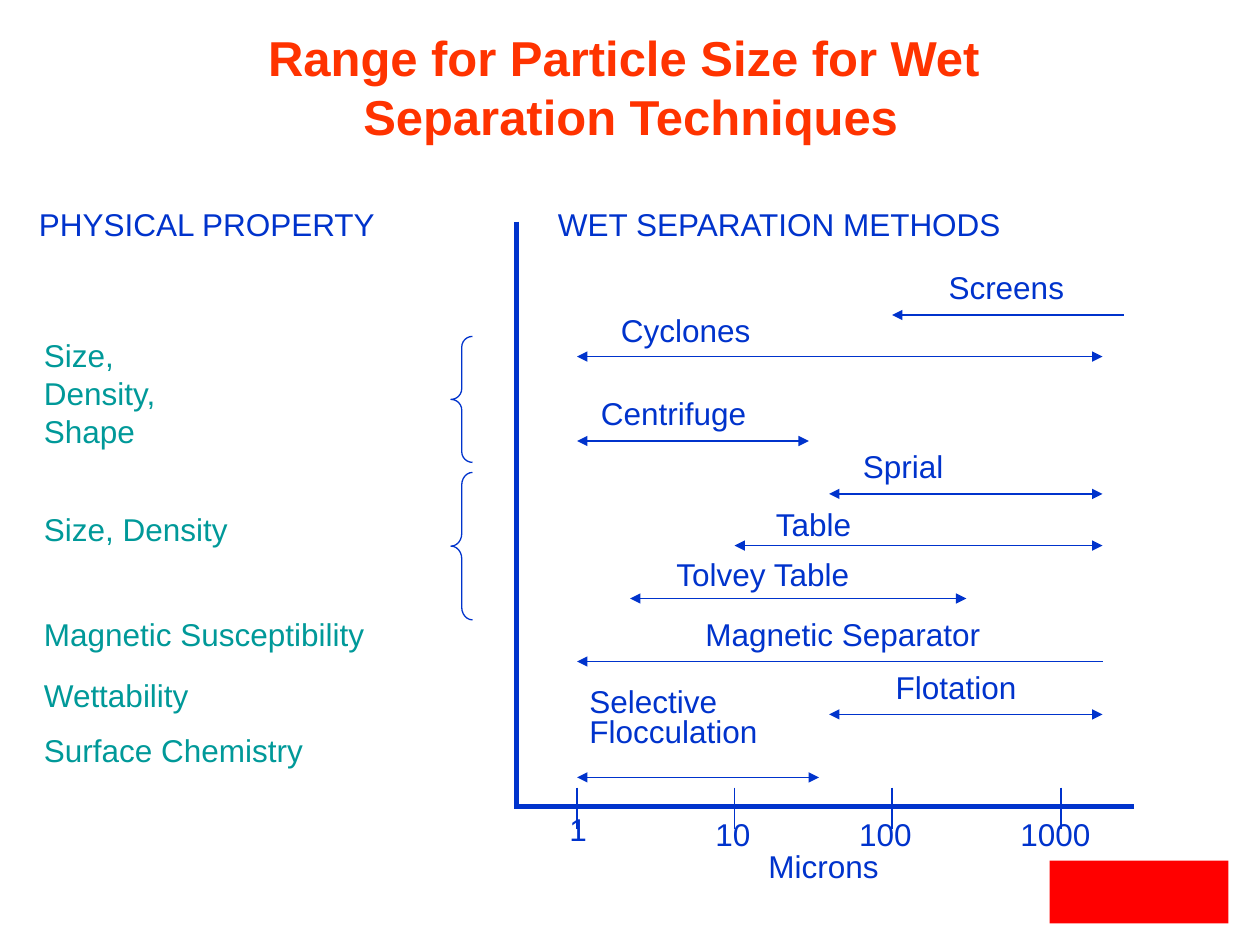
from lxml import etree
from pptx import Presentation
from pptx.dml.color import RGBColor
from pptx.enum import shapes, text
from pptx.oxml.ns import qn
from pptx.util import Inches, Pt

ORANGE = RGBColor(0xFF, 0x33, 0x00)
BLUE = RGBColor(0x00, 0x33, 0xCC)
TEAL = RGBColor(0x00, 0x99, 0x99)
RED = RGBColor(0xFF, 0x00, 0x00)

# label, label x, y, width, arrow start, end, arrow y, points right too
METHODS = [
    ("Screens", 3.35, 0.5, 1.24, 3, 4.84, 0.92, False),
    ("Cyclones", 0.75, 0.84, 1.44, 0.5, 4.67, 1.25, True),
    ("Centrifuge", 0.59, 1.5, 1.62, 0.5, 2.34, 1.92, True),
    ("Sprial", 2.67, 1.92, 1, 2.5, 4.67, 2.34, True),
    ("Table", 1.98, 2.38, 0.96, 1.75, 4.67, 2.75, True),
    ("Tolvey Table", 1.19, 2.78, 2.06, 0.92, 3.59, 3.17, True),
    ("Magnetic Separator", 1.42, 3.25, 2.82, 0.5, 4.67, 3.67, False),
    ("Flotation", 2.93, 3.67, 1.4, 2.5, 4.67, 4.09, True),
    ("Selective\nFlocculation", 0.5, 3.84, 1.86, 0.5, 2.42, 4.59, True),
]
# tick x, label, label x, label y, label width
TICKS = [
    (0.5, "1", 0.34, 4.8, 0.37),
    (1.75, "10", 1.5, 4.84, 0.53),
    (3, "100", 2.64, 4.84, 0.7),
    (4.34, "1000", 3.92, 4.84, 0.87),
]
# property, y, width, height
PROPERTIES = [
    ("Size,\nDensity,\nShape", 1.04, 1.32, 1.3),
    ("Size, Density", 2.42, 2.92, 0.5),
    ("Magnetic Susceptibility", 3.25, 3.75, 0.5),
    ("Wettability", 3.74, 2.92, 0.5),
    ("Surface Chemistry", 4.17, 2.92, 0.5),
]
# brace y, height, curve
BRACES = [(1.09, 1, 0.5), (2.17, 1.17, 0.583)]


def fill_text(sp, content, size, color, bold=False, align=None, spacing=None):
    tf = sp.text_frame
    tf.word_wrap = True
    tf.auto_size = text.MSO_AUTO_SIZE.NONE
    tf.vertical_anchor = text.MSO_ANCHOR.TOP
    tf.text = content
    for p in tf.paragraphs:
        p.alignment = align
        p.line_spacing = spacing
        p.font.name = "Arial"
        p.font.size = Pt(size)
        p.font.bold = bold
        p.font.color.rgb = color


def add_label(slide, content, x, y, w, h=0.5, color=BLUE, spacing=None):
    sp = slide.shapes.add_textbox(Inches(x), Inches(y), Inches(w), Inches(h))
    fill_text(sp, content, 18, color, spacing=spacing)


def add_line(slide, x1, y1, x2, y2, width, *arrow_ends):
    """Arrow ends are headEnd (start) and tailEnd (finish), in that order."""
    line = slide.shapes.add_connector(
        shapes.MSO_CONNECTOR.STRAIGHT,
        Inches(x1), Inches(y1), Inches(x2), Inches(y2))
    line.line.color.rgb = BLUE
    line.line.width = Pt(width)
    ln = line.line._get_or_add_ln()
    for end in arrow_ends:
        etree.SubElement(ln, qn("a:" + end), type="triangle")
    etree.SubElement(line._element.spPr, qn("a:effectLst"))


def add_title(slide, x, y, w, h):
    sp = slide.shapes.title
    sp.left, sp.top, sp.width, sp.height = map(Inches, (x, y, w, h))
    fill_text(sp, "Range for Particle Size for Wet \nSeparation Techniques", 28,
              ORANGE, bold=True, align=text.PP_ALIGN.CENTER)


def add_properties(slide, x, y, w):
    add_label(slide, "PHYSICAL PROPERTY", x, y, w)
    for name, dy, width, height in PROPERTIES:
        add_label(slide, name, x + 0.04, y + dy, width, height, TEAL)

    # Braces tie the properties to their methods
    for dy, height, curve in BRACES:
        sp = slide.shapes.add_shape(
            shapes.MSO_SHAPE.LEFT_BRACE, Inches(x + 3.37), Inches(y + dy),
            Inches(0.17), Inches(height))
        sp.adjustments[0] = curve
        sp.shadow.inherit = False
        sp.fill.background()
        sp.line.color.rgb = BLUE
        sp.line.width = Pt(0.75)


def add_methods(slide, x, y, w, axis_dy):
    add_label(slide, "WET SEPARATION METHODS", x + 0.25, y, 4.78)

    # Axes
    axis_y = y + axis_dy
    add_line(slide, x + 0.02, y + 0.18, x + 0.02, axis_y + 0.02, 3)
    add_line(slide, x, axis_y, x + w, axis_y, 3)

    # Micron scale
    for tick, name, dx, dy, width in TICKS:
        add_line(slide, x + tick, axis_y - 0.15, x + tick, axis_y + 0.18, 0.75)
        add_label(slide, name, x + dx, y + dy, width)
    add_label(slide, "Microns", x + 1.92, axis_y + 0.27, 1.31)

    # Working range of each method
    for name, dx, dy, width, start, end, line_dy, both in METHODS:
        ends = ("headEnd", "tailEnd") if both else ("headEnd",)
        add_line(slide, x + start, y + line_dy, x + end, y + line_dy, 1, *ends)
        two_lines = "\n" in name
        add_label(slide, name, x + dx, y + dy, width,
                  0.74 if two_lines else 0.5,
                  spacing=0.8 if two_lines else None)


def add_corner_block(slide, x, y, w, h):
    sp = slide.shapes.add_shape(shapes.MSO_SHAPE.RECTANGLE, Inches(x),
                                Inches(y), Inches(w), Inches(h))
    sp.shadow.inherit = False
    sp.fill.solid()
    sp.fill.fore_color.rgb = RED
    sp.line.fill.background()


def main():
    prs = Presentation()
    prs.slide_width, prs.slide_height = Inches(10), Inches(7.5)
    slide = prs.slides.add_slide(prs.slide_layouts[5])
    add_title(slide, 1.5, 0.17, 7.01, 1.04)
    add_methods(slide, 4.08, 1.58, 4.92, 4.82)
    add_properties(slide, 0.21, 1.58, 3.62)
    add_corner_block(slide, 8.33, 6.83, 1.42, 0.5)
    prs.save("out.pptx")


if __name__ == "__main__":
    main()
